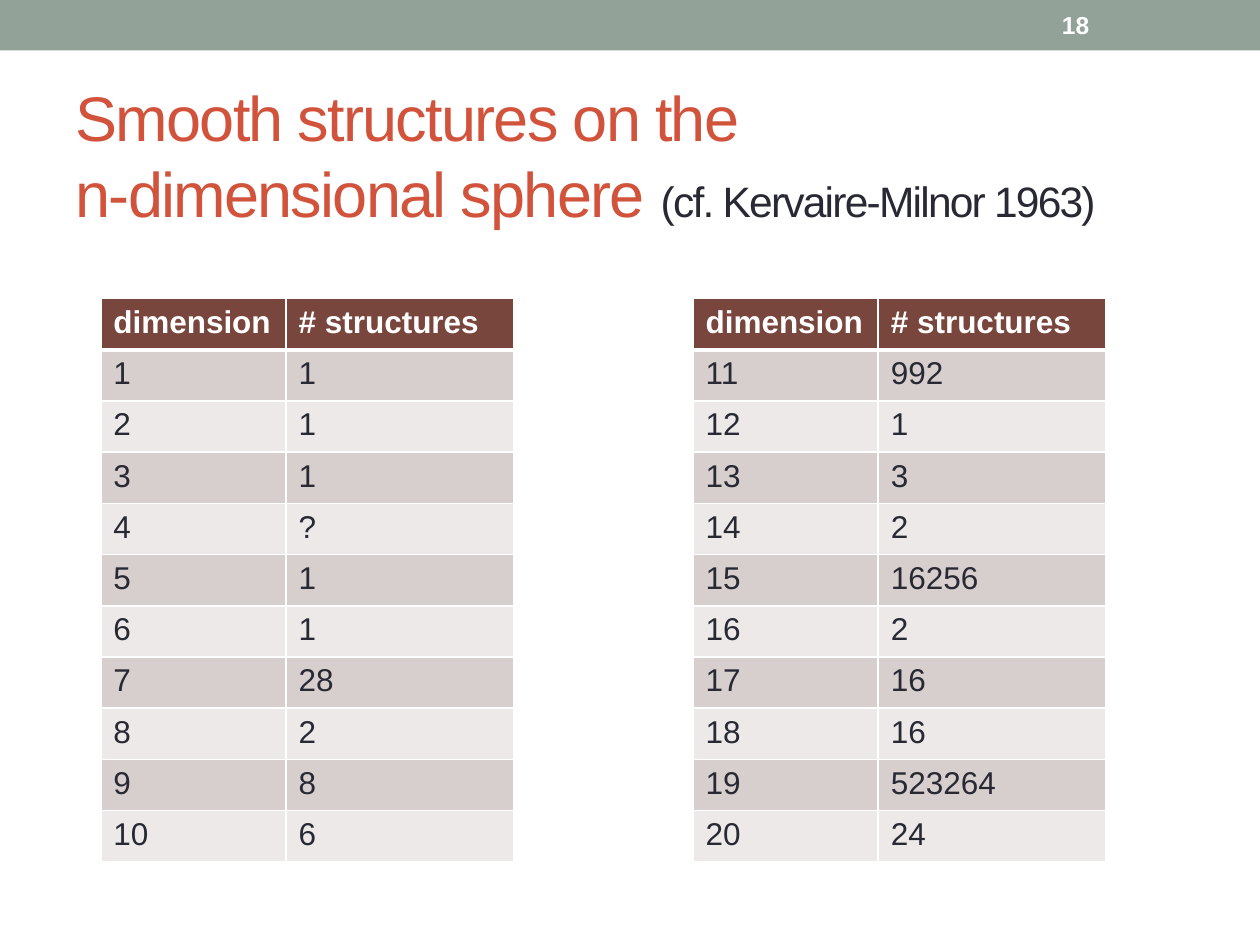
from dataclasses import dataclass

from lxml import etree
from pptx import Presentation
from pptx.dml.color import RGBColor
from pptx.enum.shapes import MSO_SHAPE
from pptx.enum.text import MSO_ANCHOR, PP_ALIGN
from pptx.oxml.ns import qn
from pptx.util import Inches, Pt

RECT = MSO_SHAPE.RECTANGLE
MIDDLE, TOP = MSO_ANCHOR.MIDDLE, MSO_ANCHOR.TOP
LEFT = PP_ALIGN.LEFT

FONT = "Arial"
WHITE, INK, RED = "FFFFFF", "292934", "D2533C"
SAGE, BROWN = "93A299", "79463D"
BANDS = ("D7CFCE", "ECE9E8")
HEADER = ("dimension", "# structures")
COL_WIDTHS = (1.47, 1.81)
TABLE_TOP, TABLE_HEIGHT = 2.37, 4.47


@dataclass
class SphereTable:
    left: float
    first_dimension: int
    structures: list[str]


TABLES = [
    SphereTable(0.8, 1, ["1", "1", "1", "?", "1", "1", "28", "2", "8", "6"]),
    SphereTable(5.5, 11, ["992", "1", "3", "2", "16256", "2", "16", "16", "523264", "24"]),
]


def rgb(color: str) -> RGBColor:
    return RGBColor.from_string(color)


def add_run(p, text: str, size: float, color: str, bold: bool = False, spacing: float = 0) -> None:
    r = p.add_run()
    r.text = text
    r.font.name, r.font.size, r.font.bold = FONT, Pt(size), bold
    r.font.color.rgb = rgb(color)
    if spacing:
        r._r.get_or_add_rPr().set("spc", str(round(spacing * 100)))


def add_border(cell, side: str, width: float) -> None:
    ln = etree.SubElement(cell._tc.get_or_add_tcPr(), qn(f"a:ln{side}"), w=str(Pt(width)))
    fill = etree.SubElement(ln, qn("a:solidFill"))
    etree.SubElement(fill, qn("a:srgbClr"), val=WHITE)


def fill_cell(cell, text: str, row: int) -> None:
    header = row == 0
    # Borders come before the fill in the cell properties
    for side in "LRTB":
        thick = (header and side == "B") or (row == 1 and side == "T")
        add_border(cell, side, 3 if thick else 1)
    cell.fill.solid()
    cell.fill.fore_color.rgb = rgb(BROWN if header else BANDS[(row - 1) % 2])
    cell.vertical_anchor = TOP
    add_run(cell.text_frame.paragraphs[0], text, 18, WHITE if header else INK, header)


def add_sphere_table(s, spec: SphereTable) -> None:
    rows = [HEADER] + [(str(n), count) for n, count in enumerate(spec.structures, spec.first_dimension)]
    table = s.shapes.add_table(len(rows), len(HEADER), Inches(spec.left), Inches(TABLE_TOP),
                               Inches(sum(COL_WIDTHS)), Inches(TABLE_HEIGHT)).table
    for column, width in zip(table.columns, COL_WIDTHS):
        column.width = Inches(width)
    for i, values in enumerate(rows):
        for j, text in enumerate(values):
            fill_cell(table.cell(i, j), text, i)


def main() -> None:
    prs = Presentation()
    prs.slide_width, prs.slide_height = Inches(10), Inches(7.5)
    s = prs.slides.add_slide(prs.slide_layouts[5])

    # Top band
    band = s.shapes.add_shape(RECT, 0, 0, prs.slide_width, Inches(0.4))
    band.shadow.inherit = False
    band.fill.solid()
    band.fill.fore_color.rgb = rgb(SAGE)
    band.line.fill.background()

    # Title
    title = s.shapes.title
    title.left, title.top = Inches(0.5), Inches(0.58)
    title.width, title.height = Inches(9), Inches(1.29)
    tf = title.text_frame
    tf.vertical_anchor = MIDDLE
    p = tf.paragraphs[0]
    p.alignment = LEFT
    add_run(p, "Smooth structures on the ", 36, RED, spacing=-1)
    p.add_line_break()
    add_run(p, "n-dimensional sphere ", 36, RED, spacing=-1)
    add_run(p, "(cf. Kervaire-Milnor 1963)", 24.3, INK, spacing=-1)

    # Tables of structure counts
    for spec in TABLES:
        add_sphere_table(s, spec)

    # Slide number
    number = s.shapes.add_textbox(Inches(8.33), Inches(0.02), Inches(1.17), Inches(0.36))
    tf = number.text_frame
    tf.word_wrap = True
    tf.vertical_anchor = MIDDLE
    add_run(tf.paragraphs[0], "18", 14, WHITE, bold=True)

    prs.save("out.pptx")


if __name__ == "__main__":
    main()
